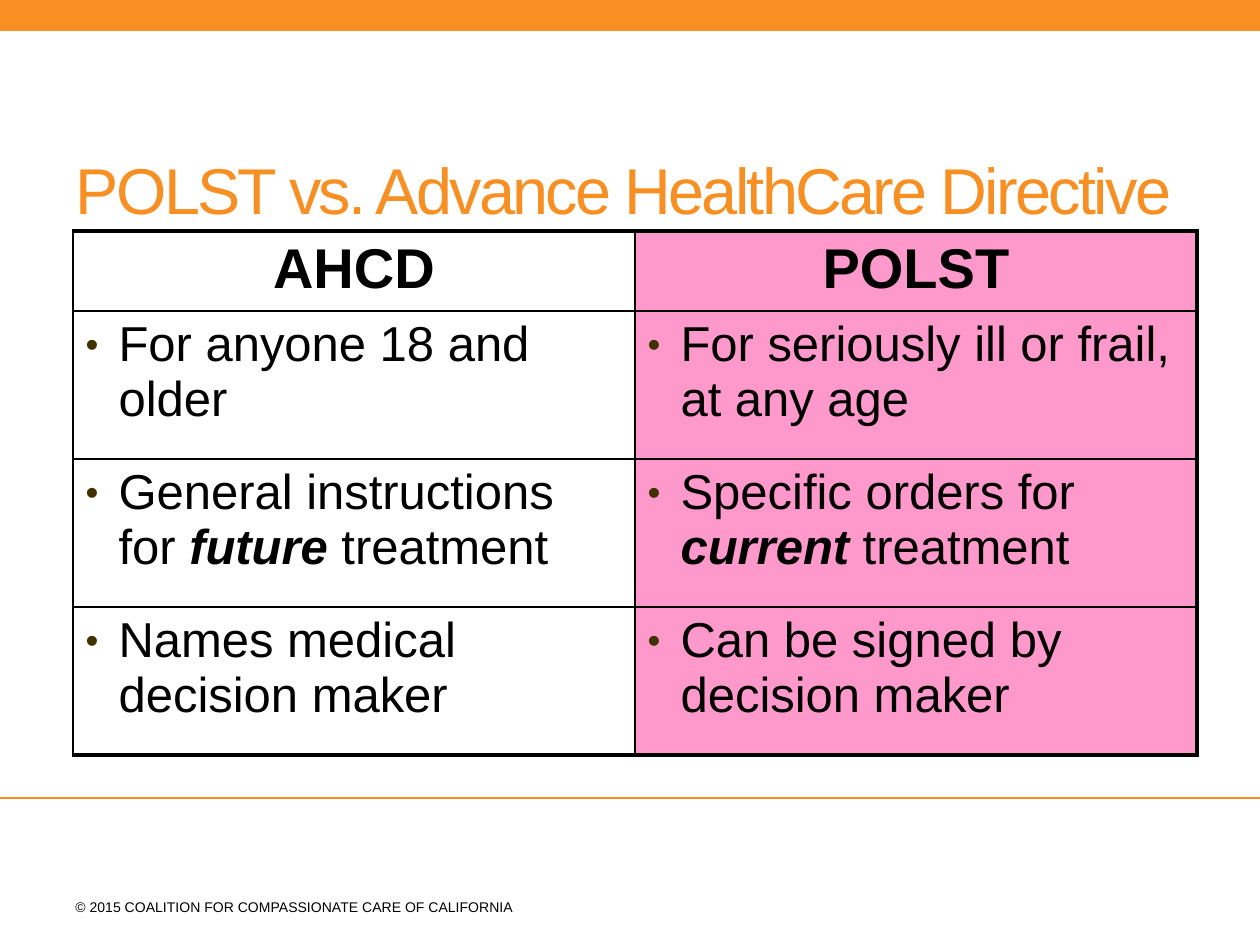
from dataclasses import dataclass

from lxml.etree import SubElement
from pptx import Presentation
from pptx.dml.color import RGBColor
from pptx.enum.shapes import MSO_CONNECTOR as Connector, MSO_SHAPE as Shape
from pptx.enum.text import MSO_ANCHOR as Anchor, MSO_AUTO_SIZE as AutoSize, PP_ALIGN as Align
from pptx.oxml.ns import qn
from pptx.util import Emu, Pt

SCALE = 914400 / 126


def px(length):
    """Turn whole pixels into EMU."""
    return Emu(round(length * SCALE))


def apply(target, values):
    """Set every attribute in a dict of format values."""
    for name, value in values.items():
        setattr(target, name, value)


@dataclass(frozen=True)
class Theme:
    """Colours, font and type sizes of the deck."""
    font: str = "Arial"
    accent: str = "F78F22"
    ink: str = "000000"
    paper: str = "FFFFFF"
    pink: str = "FF99CC"
    bullet: str = "413000"
    title: int = 37
    heading: int = 32
    body: int = 28
    footer: int = 8
    thin: float = 1
    thick: float = 2.25


class SlideBuilder:
    """Draws each kind of element on the current slide."""

    def __init__(self, page, theme):
        self.page = page
        self.theme = theme

    def add_span(self, para, text, size, color, **formats):
        """Add one formatted run to a paragraph."""
        span = para.add_run()
        span.text = text
        apply(span.font, {"name": self.theme.font, "size": Pt(size), **formats})
        span.font.color.rgb = RGBColor.from_string(color)
        return span

    def title(self, text, left, top, width, height):
        """Place and fill the title placeholder."""
        box = self.page.shapes.title
        apply(box, {"left": px(left), "top": px(top), "width": px(width), "height": px(height)})
        frame = box.text_frame
        apply(frame, {"word_wrap": True, "auto_size": AutoSize.NONE, "vertical_anchor": Anchor.TOP,
                      "margin_left": px(13), "margin_right": 0, "margin_top": px(11)})
        para = frame.paragraphs[0]
        para.alignment = Align.LEFT
        span = self.add_span(para, text, self.theme.title, self.theme.accent)
        span.font._element.set("spc", "-150")

    def bar(self, left, top, width, height):
        """Draw a filled accent bar."""
        shape = self.page.shapes.add_shape(Shape.RECTANGLE, px(left), px(top), px(width), px(height))
        shape.shadow.inherit = False
        shape.fill.solid()
        shape.fill.fore_color.rgb = RGBColor.from_string(self.theme.accent)
        shape.line.fill.background()

    def rule(self, left, right, y):
        """Draw a horizontal accent line."""
        line = self.page.shapes.add_connector(Connector.STRAIGHT, px(left), px(y), px(right), px(y))
        line.line.width = Pt(self.theme.thin)
        line.line.color.rgb = RGBColor.from_string(self.theme.accent)
        SubElement(line._element.spPr, qn("a:effectLst"))

    def footer(self, text, left, top, width, height):
        """Add the small copyright line."""
        box = self.page.shapes.add_textbox(px(left), px(top), px(width), px(height))
        box.text_frame.word_wrap = True
        self.add_span(box.text_frame.paragraphs[0], text, self.theme.footer, self.theme.ink)

    def borders(self, cell, widths):
        """Give a cell its left, right, top and bottom lines."""
        properties = cell._tc.get_or_add_tcPr()
        for side, width in widths.items():
            line = SubElement(properties, qn(f"a:ln{side}"), w=str(Pt(width)))
            fill = SubElement(line, qn("a:solidFill"))
            SubElement(fill, qn("a:srgbClr"), val=self.theme.ink)

    def bullet(self, para):
        """Give a paragraph a hanging bullet."""
        properties = para._p.get_or_add_pPr()
        indent = px(33)
        properties.set("marL", str(indent))
        properties.set("indent", str(-indent))
        color = SubElement(properties, qn("a:buClr"))
        SubElement(color, qn("a:srgbClr"), val=self.theme.bullet)
        SubElement(properties, qn("a:buSzPct"), val="75000")
        SubElement(properties, qn("a:buFont"), typeface=self.theme.font)
        SubElement(properties, qn("a:buChar"), char="•")

    def table(self, rows, left, top, widths, heights):
        """Build the comparison; every second part of a cell is emphasised."""
        theme = self.theme
        grid = self.page.shapes.add_table(len(heights), len(widths), px(left), px(top),
                                          px(sum(widths)), px(sum(heights))).table
        apply(grid, {"first_row": False, "horz_banding": False})
        for column, width in zip(grid.columns, widths):
            column.width = px(width)
        for row, height in zip(grid.rows, heights):
            row.height = px(height)
        last_row, last_column = len(heights) - 1, len(widths) - 1
        for r, row in enumerate(rows):
            for c, parts in enumerate(row):
                cell = grid.cell(r, c)
                self.borders(cell, {
                    "L": theme.thin,
                    "R": theme.thick if c == last_column else theme.thin,
                    "T": theme.thick if r == 0 else theme.thin,
                    "B": theme.thick if r == last_row else theme.thin,
                })
                cell.fill.solid()
                cell.fill.fore_color.rgb = RGBColor.from_string(theme.pink if c else theme.paper)
                para = cell.text_frame.paragraphs[0]
                if r == 0:
                    para.alignment = Align.CENTER
                else:
                    self.bullet(para)
                for index, text in enumerate(parts):
                    strong = index % 2 == 1
                    self.add_span(para, text, theme.body if r else theme.heading, theme.ink,
                                  bold=strong or r == 0, italic=strong)


ROWS = [
    (["AHCD"], ["POLST"]),
    (["For anyone 18 and older"], ["For seriously ill or frail, at any age"]),
    (["General instructions for ", "future", " treatment"],
     ["Specific orders for ", "current", " treatment"]),
    (["Names medical decision maker"], ["Can be signed by decision maker"]),
]


def main():
    """Build and save the slide."""
    deck = Presentation()
    apply(deck, {"slide_width": px(1260), "slide_height": px(945)})
    page = deck.slides.add_slide(deck.slide_layouts[5])
    builder = SlideBuilder(page, Theme())
    builder.bar(0, 0, 1260, 31)
    builder.rule(0, 1260, 798)
    builder.footer("© 2015 COALITION FOR COMPASSIONATE CARE OF CALIFORNIA", 63, 892, 536, 30)
    builder.title("POLST vs. Advance HealthCare Directive", 63, 139, 1124, 103)
    builder.table(ROWS, 73, 231, [562] * 2, [80] + [148] * 3)
    deck.save("out.pptx")


if __name__ == "__main__":
    main()
